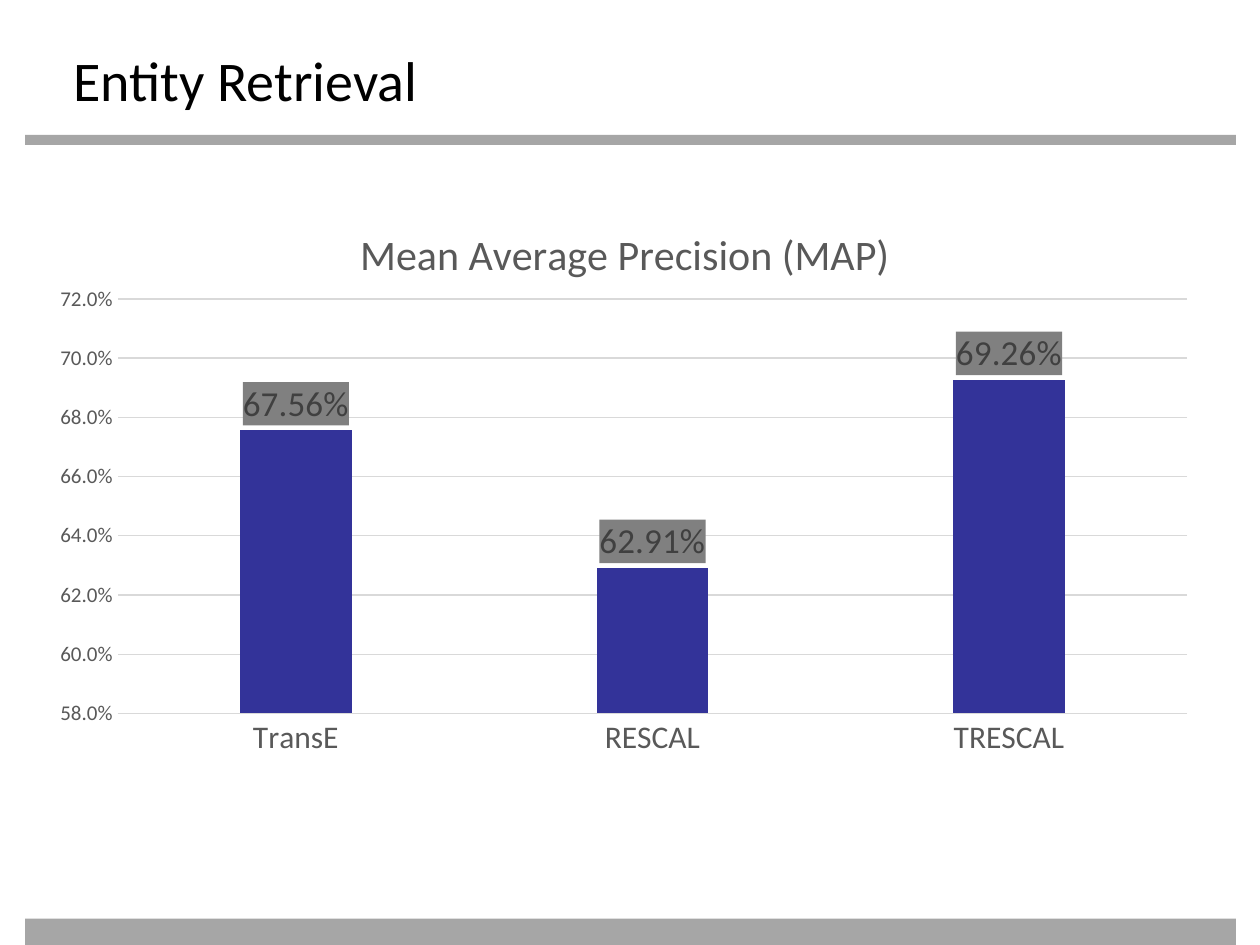
"""Build the Entity Retrieval slide with its precision chart."""
from lxml import etree
from pptx import Presentation
from pptx.chart.data import CategoryChartData
from pptx.dml.color import RGBColor
from pptx.enum import chart as ch, shapes, text
from pptx.oxml import parse_xml
from pptx.oxml.ns import nsdecls, qn
from pptx.util import Inches, Pt

TITLE = "Entity Retrieval"
HEAD = "Mean Average Precision (MAP)"
SCORES = {"TransE": 0.6756, "RESCAL": 0.6291, "TRESCAL": 0.6926}
BARS = [(1.07, 0.08), (7.29, 0.21)]
COLORS = {"black": "000000", "rule": "A6A6A6", "bar": "333399", "text": "595959",
          "label": "404040", "tag": "808080", "grid": "D9D9D9"}
FACE = "Calibri"


def color(name):
    return RGBColor.from_string(COLORS[name])


def style(font, size, name):
    font.name, font.size, font.bold = FACE, Pt(size), False
    font.color.rgb = color(name)


def rule(line):
    line.color.rgb = color("grid")
    line.width = Pt(0.75)


def layout(inner="", **share):
    rows = "".join(f'<c:{k}Mode val="edge"/>' for k in "xy")
    rows += "".join(f'<c:{k} val="{v}"/>' for k, v in share.items())
    return parse_xml(f'<c:layout {nsdecls("c")}><c:manualLayout>{inner}{rows}'
                     '</c:manualLayout></c:layout>')


def place(host, new, after=None):
    for old in host.findall(qn("c:layout")):
        host.remove(old)
    if after is None:
        host.insert(0, new)
    else:
        host.find(qn(after)).addnext(new)


def add_title(slide):
    title = slide.shapes.title
    title.left, title.top, title.width, title.height = map(Inches, (0.51, 0.28, 9, 0.55))
    frame = title.text_frame
    frame.text = TITLE
    frame.margin_left, frame.margin_top = Inches(0.07), Inches(0.08)
    frame.vertical_anchor = text.MSO_ANCHOR.TOP
    frame.auto_size = text.MSO_AUTO_SIZE.NONE
    line = frame.paragraphs[0]
    line.alignment = text.PP_ALIGN.LEFT
    style(line.runs[0].font, 32, "black")


def add_bars(slide):
    for top, height in BARS:
        bar = slide.shapes.add_shape(shapes.MSO_SHAPE.RECTANGLE, Inches(0.2), Inches(top),
                                     Inches(9.61), Inches(height))
        bar.shadow.inherit = False
        bar.fill.solid()
        bar.fill.fore_color.rgb = color("rule")
        bar.line.fill.background()


def add_chart(slide):
    data = CategoryChartData()
    data.categories = list(SCORES)
    data.add_series("Series 1", list(SCORES.values()))
    chart = slide.shapes.add_chart(ch.XL_CHART_TYPE.COLUMN_CLUSTERED, Inches(0.28),
                                   Inches(1.55), Inches(9.33), Inches(4.57), data).chart
    style(chart.font, 10, "black")
    chart.has_legend = False
    chart.has_title = True
    head = chart.chart_title
    head.text_frame.text = HEAD
    style(head.text_frame.paragraphs[0].runs[0].font, 24, "text")
    head.include_in_layout = False
    root = chart.element
    place(root.find(".//" + qn("c:title")), layout(x=0.27, y=0.04), "c:tx")
    place(root.find(".//" + qn("c:plotArea")),
          layout('<c:layoutTarget val="inner"/>', x=0.07, y=0.18, w=0.91, h=0.72))

    cat, val = chart.category_axis, chart.value_axis
    for axis, size in ((cat, 18), (val, 12)):
        axis.major_tick_mark = axis.minor_tick_mark = ch.XL_TICK_MARK.NONE
        style(axis.tick_labels.font, size, "text")
    rule(cat.format.line)
    rule(val.major_gridlines.format.line)
    val.format.line.fill.background()
    val.minimum_scale, val.maximum_scale, val.major_unit = 0.58, 0.72, 0.02
    val.tick_labels.number_format = "0.0%"
    val.tick_labels.number_format_is_linked = False

    plot = chart.plots[0]
    plot.gap_width, plot.overlap, plot.vary_by_categories = 219, -27, False
    series = plot.series[0]
    series.format.fill.solid()
    series.format.fill.fore_color.rgb = color("bar")
    add_labels(series.data_labels, root)


def add_labels(labels, root):
    labels.show_value = True
    labels.position = ch.XL_LABEL_POSITION.OUTSIDE_END
    labels.number_format, labels.number_format_is_linked = "0.00%", False
    style(labels.font, 20, "label")
    props = etree.Element(qn("c:spPr"))
    fill = etree.SubElement(props, qn("a:solidFill"))
    etree.SubElement(fill, qn("a:srgbClr"), val=COLORS["tag"])
    root.find(f".//{qn('c:dLbls')}/{qn('c:txPr')}").addprevious(props)


def main():
    deck = Presentation()
    deck.slide_width, deck.slide_height = Inches(10), Inches(7.5)
    slide = deck.slides.add_slide(deck.slide_layouts[5])
    add_bars(slide)
    add_title(slide)
    add_chart(slide)
    deck.save("out.pptx")


if __name__ == "__main__":
    main()
